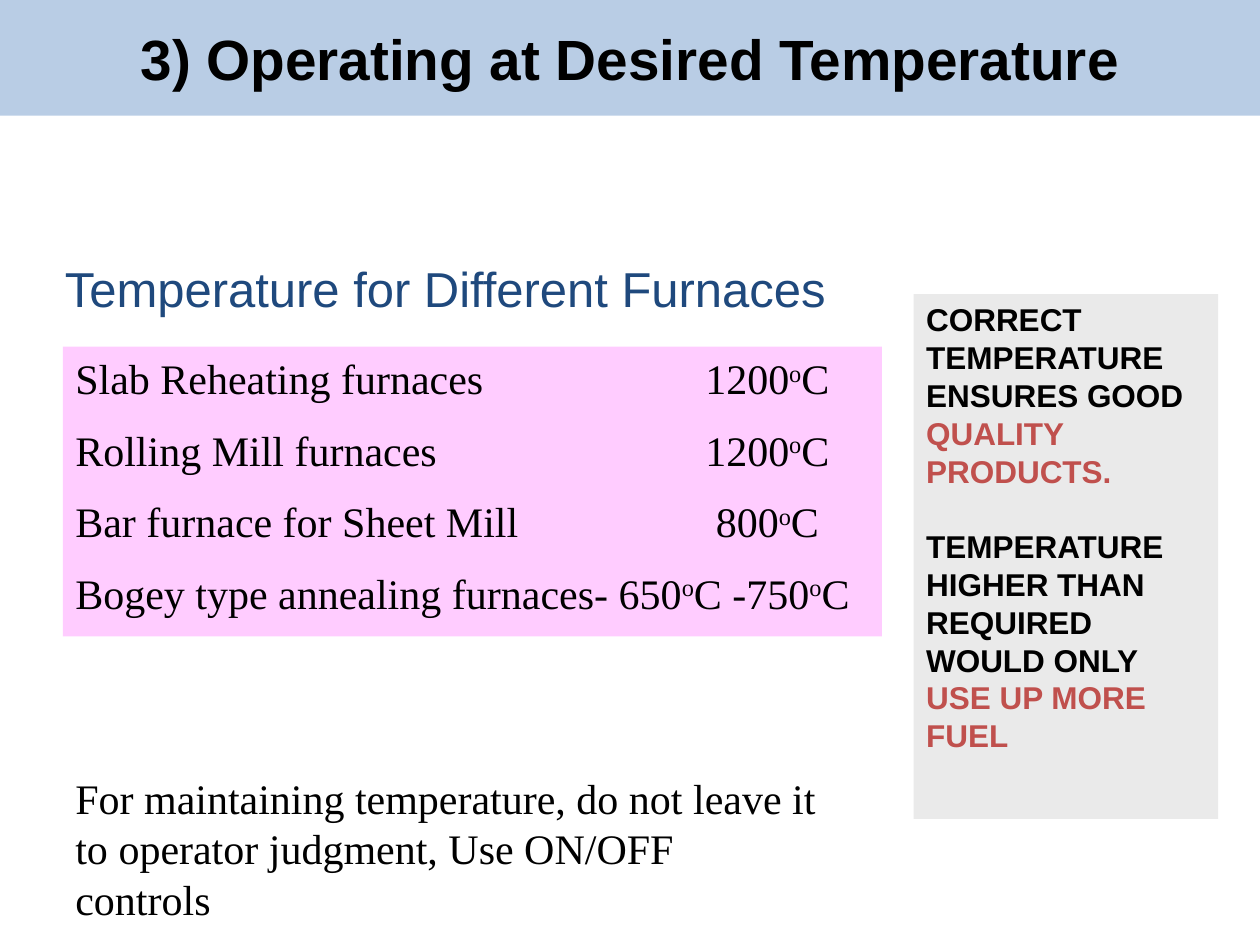
from lxml import etree
from pptx import Presentation
from pptx.dml.color import RGBColor
from pptx.enum.shapes import MSO_SHAPE
from pptx.enum.text import MSO_ANCHOR, MSO_AUTO_SIZE, PP_ALIGN
from pptx.oxml.ns import qn
from pptx.util import Cm, Pt

RECT = MSO_SHAPE.RECTANGLE
TOP, MIDDLE = MSO_ANCHOR.TOP, MSO_ANCHOR.MIDDLE
FIXED = MSO_AUTO_SIZE.NONE
LEFT, CENTER, JUSTIFY = PP_ALIGN.LEFT, PP_ALIGN.CENTER, PP_ALIGN.JUSTIFY
SANS, SERIF = "Arial", "Times New Roman"
BLACK, RED, NAVY = "000000", "C0504D", "1F497D"
BLUE, PINK, GREY = "B9CDE5", "FFCCFF", "EAEAEA"
TAB = Cm(13.95)

TITLE = "3) Operating at Desired Temperature"
HEADING = "Temperature for Different Furnaces"
ADVICE = ("For maintaining temperature, do not leave it to operator judgment, "
          "Use ON/OFF controls")
FURNACES = [
    ("Slab Reheating furnaces\t", ["1200"]),
    ("Rolling Mill furnaces\t", ["1200"]),
    ("Bar furnace for Sheet Mill\t", ["800"]),
    ("Bogey type annealing furnaces- ", ["650", "750"]),
]
NOTES = [
    ("CORRECT TEMPERATURE ENSURES GOOD ", "QUALITY PRODUCTS."),
    ("TEMPERATURE HIGHER THAN REQUIRED WOULD ONLY ", "USE UP MORE FUEL"),
]


def color(code):
    return RGBColor.from_string(code)


def place(shape, box, fill=None, anchor=TOP):
    shape.left, shape.top, shape.width, shape.height = map(Cm, box)
    if fill:
        shape.fill.solid()
        shape.fill.fore_color.rgb = color(fill)
    frame = shape.text_frame
    frame.word_wrap = True
    frame.auto_size = FIXED
    frame.vertical_anchor = anchor
    return frame


def panel(slide, box, fill):
    shape = slide.shapes.add_shape(RECT, *map(Cm, box))
    shape.shadow.inherit = False
    shape.line.fill.background()
    return place(shape, box, fill)


def label(slide, box):
    return place(slide.shapes.add_textbox(*map(Cm, box)), box)


def style(para, font, size, code=BLACK, bold=False, align=LEFT, gap=0):
    para.font.name, para.font.size, para.font.bold = font, Pt(size), bold
    para.font.color.rgb = color(code)
    para.alignment = align
    para.space_before = Pt(gap)


def lines(frame, count):
    return [frame.paragraphs[0]] + [frame.add_paragraph() for _ in range(count - 1)]


def add_run(para, text):
    run = para.add_run()
    run.text = text
    return run


def add_temp(para, lead, value):
    add_run(para, lead + value)
    add_run(para, "o")._r.get_or_add_rPr().set("baseline", "30000")
    add_run(para, "C")


def add_tab(para):
    stops = etree.SubElement(para._p.get_or_add_pPr(), qn("a:tabLst"))
    etree.SubElement(stops, qn("a:tab"), pos=str(int(TAB)), algn="ctr")


def add_list(frame):
    for para, (name, temps) in zip(lines(frame, len(FURNACES)), FURNACES):
        tabbed = name.endswith("\t")
        if tabbed:
            add_tab(para)
        for lead, temp in zip((name, " -"), temps):
            add_temp(para, lead, temp)
        style(para, SERIF, 24, align=JUSTIFY if tabbed else LEFT, gap=12)


def add_notes(frame):
    for i, (para, (plain, strong)) in enumerate(zip(lines(frame, len(NOTES)), NOTES)):
        add_run(para, plain)
        add_run(para, strong).font.color.rgb = color(RED)
        style(para, SANS, 18, bold=True, gap=21.6 * i)


def main():
    """Build the furnace temperature slide."""
    deck = Presentation()
    deck.slide_width, deck.slide_height = Cm(25.4), Cm(19.05)
    slide = deck.slides.add_slide(deck.slide_layouts[5])

    title = place(slide.shapes.title, (0, 0, 25.4, 2.33), BLUE, MIDDLE)
    title.text = TITLE
    style(title.paragraphs[0], SANS, 32.4, bold=True, align=CENTER)

    add_list(panel(slide, (1.27, 6.99, 16.51, 5.84), PINK))
    add_notes(panel(slide, (18.42, 5.93, 6.14, 10.58), GREY))

    heading = label(slide, (1.06, 5.08, 16.93, 1.45))
    heading.text = HEADING
    style(heading.paragraphs[0], SANS, 28, NAVY, gap=14)

    advice = label(slide, (1.27, 15.45, 15.45, 3.3))
    advice.text = ADVICE
    style(advice.paragraphs[0], SERIF, 24, gap=12)

    deck.save("out.pptx")


if __name__ == "__main__":
    main()
